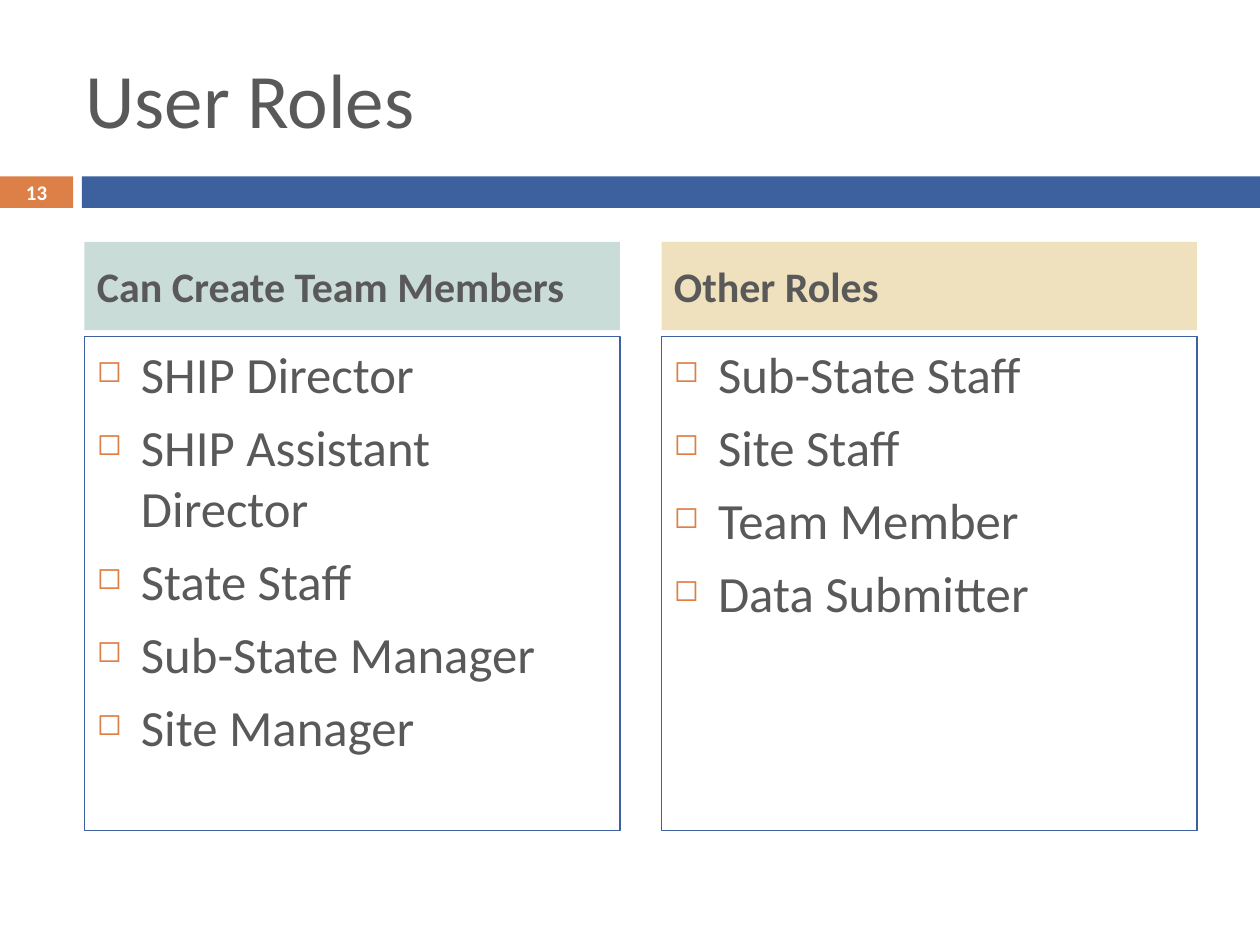
import lxml.etree
import pptx
import pptx.dml.color
import pptx.enum.shapes
import pptx.enum.text
import pptx.oxml.ns
import pptx.util
from pptx.util import Inches

GRAY, BLUE, ORANGE, WHITE = "595959", "3C619E", "DD8047", "FFFFFF"
ALIGN = pptx.enum.text.PP_ALIGN
ANCHOR = pptx.enum.text.MSO_ANCHOR


def color(hex_code):
    return pptx.dml.color.RGBColor.from_string(hex_code)


def add_box(page, left, top, width, height, fill=None, line=None):
    box = page.shapes.add_shape(
        pptx.enum.shapes.MSO_SHAPE.RECTANGLE, left, top, width, height)
    box.shadow.inherit = False
    if fill:
        box.fill.solid()
        box.fill.fore_color.rgb = color(fill)
    else:
        box.fill.background()
    if line:
        box.line.color.rgb = color(line)
        box.line.width = pptx.util.Pt(0.75)
    else:
        box.line.fill.background()
    return box


def add_bullet(para):
    """Give the paragraph a hanging indent and a small hollow square."""
    properties = para._p.get_or_add_pPr()
    properties.set("marL", str(Inches(0.35)))
    properties.set("indent", str(-Inches(0.35)))

    def add(parent, tag, **attributes):
        return lxml.etree.SubElement(parent, pptx.oxml.ns.qn(tag), attributes)

    add(add(properties, "a:buClr"), "a:srgbClr", val=ORANGE)
    add(properties, "a:buSzPct", val="60000")
    add(properties, "a:buChar", char="◻")


def write(box, lines, size, hex_code=GRAY, bold=False, align=ALIGN.LEFT,
          anchor=ANCHOR.MIDDLE, before=0, bullets=False):
    frame = box.text_frame
    frame.word_wrap = True
    frame.vertical_anchor = anchor
    for index, line in enumerate(lines):
        para = frame.add_paragraph() if index else frame.paragraphs[0]
        para.alignment = align
        para.space_before = pptx.util.Pt(before)
        if bullets:
            add_bullet(para)
        span = para.add_run()
        span.text = line
        span.font.name = "Calibri"
        span.font.size = pptx.util.Pt(size)
        span.font.bold = bold
        span.font.color.rgb = color(hex_code)


def add_title(page, left, top, width, height, text):
    write(page.shapes.add_textbox(left, top, width, height), [text], 44)


def add_number_band(page, left, top, width, height, number):
    tab_width, gap = Inches(0.58), Inches(0.07)
    tab = add_box(page, left, top, tab_width, height, fill=ORANGE)
    write(tab, [number], 11.9, WHITE, bold=True, align=ALIGN.CENTER)
    bar_offset = tab_width + gap
    add_box(page, left + bar_offset, top, width - bar_offset, height, fill=BLUE)


def add_role_column(page, left, top, width, height, heading, fill, roles):
    heading_height, gap = Inches(0.7), Inches(0.05)
    header = add_box(page, left, top, width, heading_height, fill=fill)
    write(header, [heading], 24, bold=True, before=7)
    list_offset = heading_height + gap
    body = add_box(page, left, top + list_offset, width, height - list_offset,
                   line=BLUE)
    write(body, roles, 29, anchor=ANCHOR.TOP, before=7, bullets=True)


def main():
    deck = pptx.Presentation()
    deck.slide_width, deck.slide_height = Inches(10), Inches(7.5)
    page = deck.slides.add_slide(deck.slide_layouts[6])

    add_title(page, Inches(0.58), Inches(0.3), Inches(8.92), Inches(0.95),
              "User Roles")
    add_number_band(page, 0, Inches(1.4), deck.slide_width, Inches(0.25), "13")

    columns = [
        ("Can Create Team Members", "CADCD8",
         ["SHIP Director", "SHIP Assistant Director", "State Staff",
          "Sub-State Manager", "Site Manager"]),
        ("Other Roles", "EFE0BE",
         ["Sub-State Staff", "Site Staff", "Team Member", "Data Submitter"]),
    ]
    width, gap = Inches(4.25), Inches(0.33)
    for index, (heading, fill, roles) in enumerate(columns):
        left = Inches(0.67) + index * (width + gap)
        add_role_column(page, left, Inches(1.92), width, Inches(4.67),
                        heading, fill, roles)

    deck.save("out.pptx")


if __name__ == "__main__":
    main()
